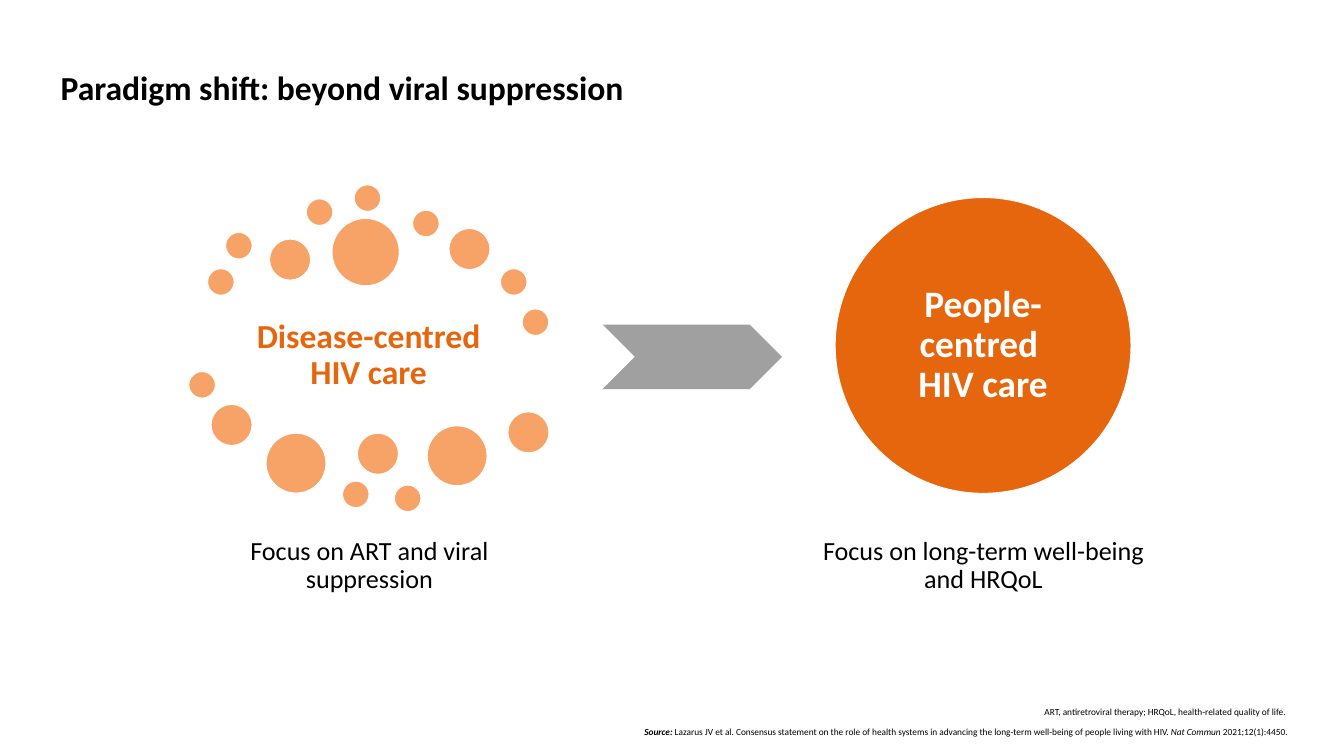
from dataclasses import dataclass

from pptx import Presentation
from pptx.dml.color import RGBColor
from pptx.enum.shapes import MSO_SHAPE
from pptx.enum.text import MSO_ANCHOR, PP_ALIGN
from pptx.util import Cm, Pt

OVAL, ARROW = MSO_SHAPE.OVAL, MSO_SHAPE.CHEVRON
LEFT, CENTER, RIGHT = PP_ALIGN.LEFT, PP_ALIGN.CENTER, PP_ALIGN.RIGHT
TOP, MIDDLE, BOTTOM = MSO_ANCHOR.TOP, MSO_ANCHOR.MIDDLE, MSO_ANCHOR.BOTTOM


@dataclass(frozen=True)
class Theme:
    font: str = "Calibri"
    black: str = "000000"
    white: str = "FFFFFF"
    orange: str = "E5660C"
    peach: str = "F7A266"
    grey: str = "A0A0A0"
    note: int = 10
    body: int = 28
    head: int = 36
    big: int = 40


# Dot diameter -> left and top of each dot, in cm
DOTS = {
    1: [(7.85, 10.16), (8.53, 8.79), (11.58, 7.52), (13.39, 6.99), (15.6, 7.95),
        (18.92, 10.16), (19.74, 11.68), (7.14, 14.05), (12.95, 18.19), (14.91, 18.34)],
    1.55: [(10.19, 9.04), (16.97, 8.64), (7.98, 15.29), (13.51, 16.38), (19.2, 15.57)],
    2.26: [(10.06, 16.38), (16.15, 16.1)],
    2.54: [(12.55, 8.26)],
}

CAPTIONS = [
    (9.02, 9.88, "Focus on ART and viral suppression"),
    (30.68, 12.98, "Focus on long-term well-being and HRQoL"),
]

# Text and whether it is bold and italic
SOURCE = [
    ("Source: ", True, True),
    ("Lazarus JV et al. Consensus statement on the role of health systems in "
     "advancing the long-term well-being of people living with HIV. ", False, False),
    ("Nat Commun ", False, True),
    ("2021;12(1):4450.", False, False),
]


class Deck:
    def __init__(self, theme):
        self.theme = theme
        self.prs = Presentation()
        self.prs.slide_width, self.prs.slide_height = Cm(50.8), Cm(28.58)
        self.slide = self.prs.slides.add_slide(self.prs.slide_layouts[6])

    def put_text(self, shape, text, size, color, bold=None, align=CENTER,
                 anchor=MIDDLE, inset=0.0, spacing=0.9):
        """Fill a shape with one styled paragraph and return the paragraph."""
        frame = shape.text_frame
        frame.word_wrap = True
        frame.vertical_anchor = anchor
        frame.margin_left = frame.margin_right = Cm(inset)
        frame.margin_top = frame.margin_bottom = Cm(inset)
        para = frame.paragraphs[0]
        para.text = text
        para.alignment = align
        para.line_spacing = spacing
        font = para.font
        font.name, font.size, font.bold = self.theme.font, Pt(size), bold
        font.color.rgb = RGBColor.from_string(color)
        return para

    def label(self, box, text, size, color, **style):
        shape = self.slide.shapes.add_textbox(*map(Cm, box))
        return self.put_text(shape, text, size, color, **style)

    def shape(self, kind, box, fill, line=None):
        shape = self.slide.shapes.add_shape(kind, *map(Cm, box))
        shape.shadow.inherit = False
        shape.fill.solid()
        shape.fill.fore_color.rgb = RGBColor.from_string(fill)
        if line:
            shape.line.color.rgb = RGBColor.from_string(line)
            shape.line.width = Pt(1)
        else:
            shape.line.fill.background()
        return shape

    def circle(self, left, top, size, fill):
        return self.shape(OVAL, (left, top, size, size), fill, self.theme.white)

    def note(self, box, parts):
        """Add a right-aligned small print line from styled parts."""
        para = self.label(box, "", self.theme.note, self.theme.black,
                          align=RIGHT, anchor=BOTTOM, spacing=1.0)
        for text, bold, italic in parts:
            run = para.add_run()
            run.text = text
            run.font.bold, run.font.italic = bold, italic


def main():
    theme = Theme()
    deck = Deck(theme)
    deck.label((2.29, 2.54, 39.98, 1.96), "Paradigm shift: beyond viral suppression",
               theme.head, theme.black, bold=True, align=LEFT, anchor=TOP, spacing=1.0)

    deck.label((8.69, 11.81, 10.49, 3.25), "Disease-centred HIV care",
               theme.head, theme.orange, bold=True, inset=0.1)
    for size, spots in DOTS.items():
        for left, top in spots:
            deck.circle(left, top, size, theme.peach)

    deck.shape(ARROW, (22.78, 12.27, 6.78, 2.44), theme.grey)

    people = deck.circle(31.57, 7.47, 11.18, theme.orange)
    deck.put_text(people, "People-centred \vHIV care", theme.big, theme.white,
                  bold=True, inset=0.1)

    for left, width, text in CAPTIONS:
        deck.label((left, 20.24, width, 2.34), text, theme.body, theme.black,
                   anchor=TOP, inset=0.08)

    deck.note((8.84, 25.65, 39.75, 1.47),
              [("ART, antiretroviral therapy; HRQoL, health-related quality of life.",
                False, False)])
    deck.note((23.83, 27.1, 24.84, 0.76), SOURCE)
    deck.prs.save("out.pptx")


if __name__ == "__main__":
    main()
